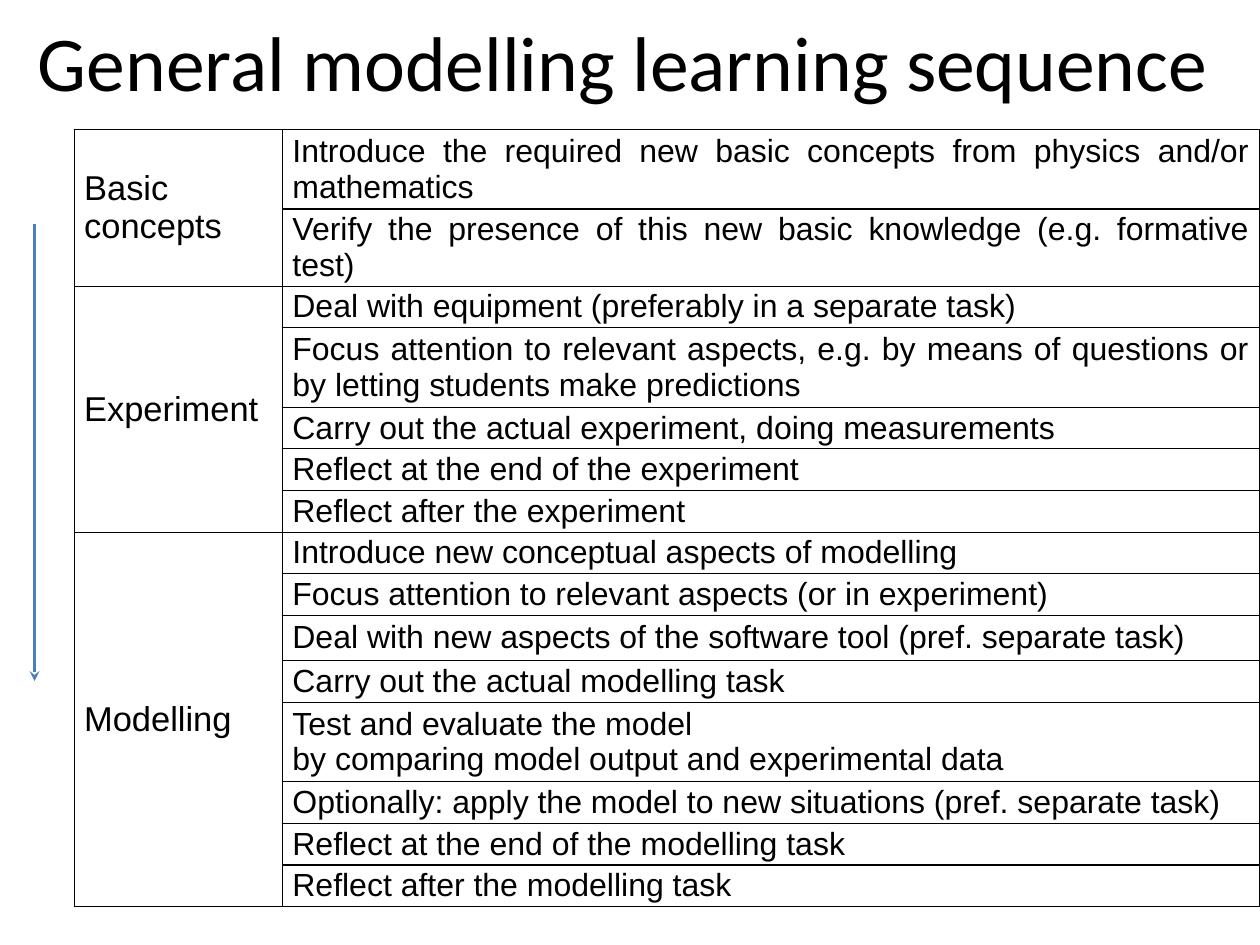
import pptx
import pptx.util
import pptx.dml.color
import pptx.enum.shapes
import pptx.enum.text
import pptx.oxml.ns
from lxml import etree

Inches = pptx.util.Inches
Pt = pptx.util.Pt
qn = pptx.oxml.ns.qn
ALIGN = pptx.enum.text.PP_ALIGN
MIDDLE = pptx.enum.text.MSO_ANCHOR.MIDDLE
BLACK = pptx.dml.color.RGBColor(0x00, 0x00, 0x00)
BLUE = pptx.dml.color.RGBColor(0x4B, 0x7E, 0xBC)

ROW, TALL_ROW = 0.47, 0.9
PHASES = [
    ("Basic concepts", [
        ("Introduce the required new basic concepts from physics and/or mathematics", TALL_ROW),
        ("Verify the presence of this new basic knowledge (e.g. formative test)", 0.87),
    ]),
    ("Experiment", [
        ("Deal with equipment (preferably in a separate task)", ROW),
        ("Focus attention to relevant aspects, e.g. by means of questions or "
         "by letting students make predictions", TALL_ROW),
        ("Carry out the actual experiment, doing measurements", ROW),
        ("Reflect at the end of the experiment", ROW),
        ("Reflect after the experiment", ROW),
    ]),
    ("Modelling", [
        ("Introduce new conceptual aspects of modelling", ROW),
        ("Focus attention to relevant aspects (or in experiment)", ROW),
        ("Deal with new aspects of the software tool (pref. separate task)", 0.51),
        ("Carry out the actual modelling task", ROW),
        ("Test and evaluate the model\nby comparing model output and experimental data", TALL_ROW),
        ("Optionally: apply the model to new situations (pref. separate task)", ROW),
        ("Reflect at the end of the modelling task", ROW),
        ("Reflect after the modelling task", ROW),
    ]),
]


def write(tf, text, size=26, font="Arial", color=BLACK, align=ALIGN.JUSTIFY):
    for i, line in enumerate(text.split("\n")):
        p = tf.add_paragraph() if i else tf.paragraphs[0]
        p.alignment = align
        r = p.add_run()
        r.text = line
        r.font.size = Pt(size)
        r.font.name = font
        r.font.color.rgb = color


class Deck:
    """Hold the table and line style and the current slide."""

    def __init__(self, prs):
        self.border_width = Pt(1)
        self.arrow_width = Pt(2.75)
        self.s = prs.slides.add_slide(prs.slide_layouts[6])

    def title(self, text, x, y, w, h):
        sp = self.s.shapes.add_textbox(Inches(x), Inches(y), Inches(w), Inches(h))
        tf = sp.text_frame
        tf.word_wrap = True
        tf.vertical_anchor = MIDDLE
        tf.margin_left = tf.margin_right = Inches(0.14)
        tf.margin_top = tf.margin_bottom = Inches(0.07)
        write(tf, text, size=63, font="Calibri", align=ALIGN.CENTER)

    def style_cell(self, cell, inset):
        cell.vertical_anchor = MIDDLE
        cell.margin_left = cell.margin_right = Inches(0.11)
        cell.margin_top = cell.margin_bottom = Inches(inset)
        tcPr = cell._tc.get_or_add_tcPr()
        for side in ("lnL", "lnR", "lnT", "lnB"):
            ln = etree.SubElement(tcPr, qn("a:" + side), w=str(self.border_width))
            fill = etree.SubElement(ln, qn("a:solidFill"))
            etree.SubElement(fill, qn("a:srgbClr"), val=str(BLACK))
        cell.fill.background()

    def phase_table(self, phases, x, y, widths):
        heights = [h for _, steps in phases for _, h in steps]
        table = self.s.shapes.add_table(
            len(heights), len(widths), Inches(x), Inches(y),
            Inches(sum(widths)), Inches(sum(heights))).table
        table.first_row = table.horz_banding = False
        for col, w in zip(table.columns, widths):
            col.width = Inches(w)
        for row, h in zip(table.rows, heights):
            row.height = Inches(h)
            for cell, inset in zip(row.cells, (0, 0.02)):
                self.style_cell(cell, inset)
        top = 0
        for phase, steps in phases:
            table.cell(top, 0).merge(table.cell(top + len(steps) - 1, 0))
            write(table.cell(top, 0).text_frame, phase, size=28)
            for i, (step, _) in enumerate(steps, top):
                write(table.cell(i, 1).text_frame, step)
            top += len(steps)

    def arrow(self, x1, y1, x2, y2):
        c = self.s.shapes.add_connector(
            pptx.enum.shapes.MSO_CONNECTOR.STRAIGHT,
            Inches(x1), Inches(y1), Inches(x2), Inches(y2))
        c.line.color.rgb = BLUE
        c.line.width = self.arrow_width
        spPr = c.element.spPr
        etree.SubElement(spPr.find(qn("a:ln")), qn("a:tailEnd"), type="stealth")
        etree.SubElement(spPr, qn("a:effectLst"))


def main():
    prs = pptx.Presentation()
    prs.slide_width = Inches(14.22)
    prs.slide_height = Inches(10.67)
    deck = Deck(prs)
    deck.phase_table(PHASES, 0.84, 1.46, (2.35, 11.03))
    deck.title("General modelling learning sequence", 0, 0.07, 14.06, 1.23)
    deck.arrow(0.39, 2.53, 0.39, 7.69)
    prs.save("out.pptx")


if __name__ == "__main__":
    main()
